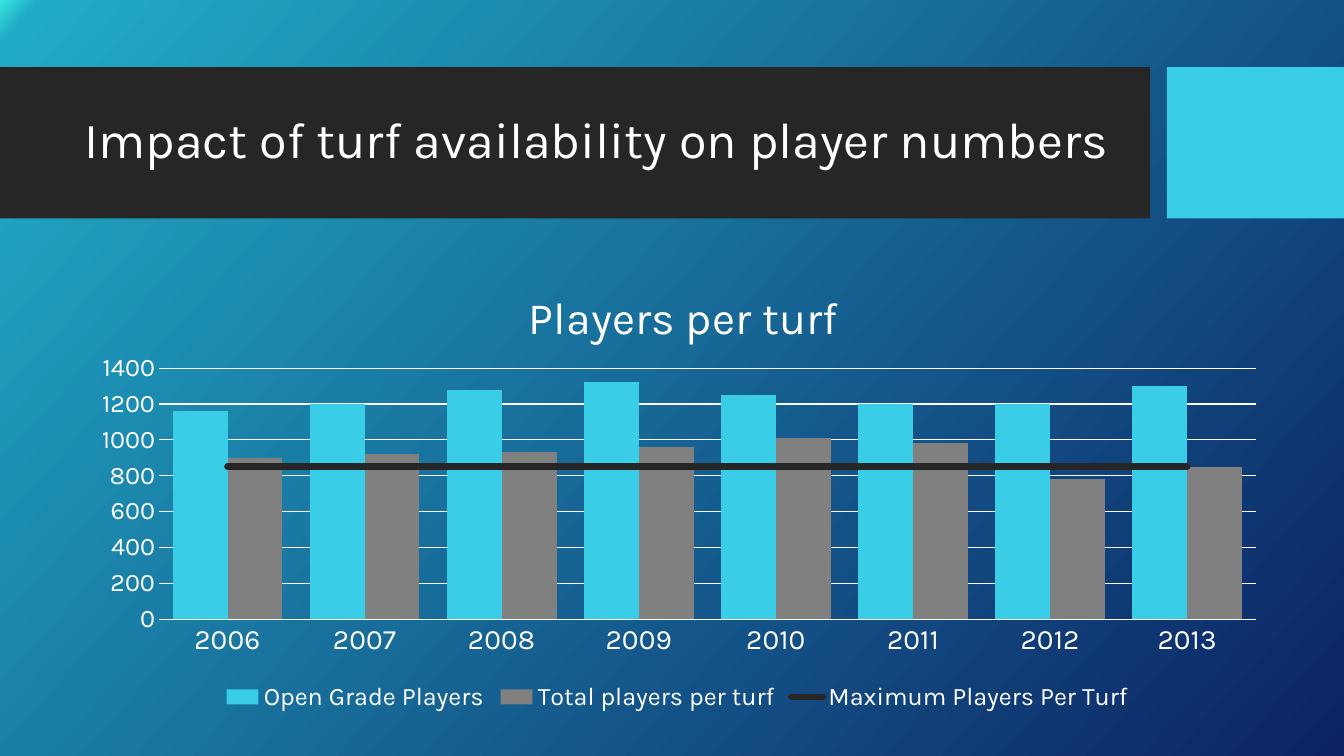
"""Build the slide on turf availability and player numbers."""
from copy import deepcopy
from dataclasses import dataclass

from lxml import etree
from pptx import Presentation
from pptx import util as u
from pptx.chart import data as chart_data
from pptx.dml import color
from pptx.enum import chart as charts
from pptx.enum import shapes, text
from pptx.oxml import ns, parse_xml


@dataclass(frozen=True)
class Theme:
    """Colours, font and type sizes."""
    font: str = "Karla"
    dark: str = "262626"
    cyan: str = "39CDE7"
    gray: str = "808080"
    white: str = "FFFFFF"
    background: tuple = ((0, "36E6DD"), (0.02, "21ABC8"), (1, "0C2263"))
    background_angle: int = 42
    heading: int = 36
    chart_title: int = 32
    category: int = 20
    label: int = 18


def rgb(value):
    """Return a colour from its hex code."""
    return color.RGBColor.from_string(value)


def drop(element, tag):
    """Remove the children that have a tag."""
    for child in element.findall(ns.qn(tag)):
        element.remove(child)


def place(element, index, **fractions):
    """Give a chart part a manual layout in fractions of the chart."""
    drop(element, "c:layout")
    layout = parse_xml(f'<c:layout {ns.nsdecls("c")}><c:manualLayout/></c:layout>')
    for name, value in fractions.items():
        etree.SubElement(layout[0], ns.qn(f"c:{name}")).set("val", str(value))
    element.insert(index, layout)


class SlideBuilder:
    """Draw elements on one slide in one style."""

    def __init__(self, slide, theme):
        self.slide = slide
        self.theme = theme

    def background(self):
        """Fill the slide with the theme gradient."""
        fill = self.slide.background.fill
        fill.gradient()
        stops = self.slide.element.find(".//" + ns.qn("a:gsLst"))
        stops.append(deepcopy(stops[-1]))
        fill.gradient_angle = 360 - self.theme.background_angle
        for stop, (position, value) in zip(fill.gradient_stops, self.theme.background):
            stop.position = position
            stop.color.rgb = rgb(value)

    def style(self, font, size):
        """Set the theme font in white at a size."""
        font.name = self.theme.font
        font.size = u.Pt(size)
        font.bold = False
        font.color.rgb = rgb(self.theme.white)

    def block(self, left, top, width, height, fill):
        """Add a plain filled rectangle."""
        shape = self.slide.shapes.add_shape(
            shapes.MSO_SHAPE.RECTANGLE, *map(u.Pt, (left, top, width, height)))
        shape.shadow.inherit = False
        shape.fill.solid()
        shape.fill.fore_color.rgb = rgb(fill)
        shape.line.fill.background()

    def heading(self, left, top, width, height, words):
        """Add the slide heading."""
        box = self.slide.shapes.add_textbox(*map(u.Pt, (left, top, width, height)))
        frame = box.text_frame
        frame.word_wrap = True
        frame.vertical_anchor = text.MSO_ANCHOR.MIDDLE
        paragraph = frame.paragraphs[0]
        paragraph.line_spacing = 0.9
        run = paragraph.add_run()
        run.text = words
        self.style(run.font, self.theme.heading)

    def chart(self, left, top, width, height, title, categories, series):
        """Add a column chart whose last series is a line."""
        data = chart_data.CategoryChartData(number_format="General")
        data.categories = categories
        for name, values in series.items():
            data.add_series(name, values)
        chart = self.slide.shapes.add_chart(
            charts.XL_CHART_TYPE.COLUMN_CLUSTERED,
            *map(u.Pt, (left, top, width, height)), data).chart
        self.style(chart.font, self.theme.label)
        self.move_last_to_line(chart)
        self.series_colours(chart)
        self.axes(chart)
        self.chart_title(chart, title)
        chart.has_legend = True
        chart.legend.position = charts.XL_LEGEND_POSITION.BOTTOM
        chart.legend.include_in_layout = False
        self.style(chart.legend.font, self.theme.label)

    def move_last_to_line(self, chart):
        """Move the last column series into a line plot on the same axes."""
        plot_area = chart.element.find(".//" + ns.qn("c:plotArea"))
        columns = plot_area.find(ns.qn("c:barChart"))
        line = parse_xml(
            f'<c:lineChart {ns.nsdecls("c")}><c:grouping val="standard"/>'
            '<c:varyColors val="0"/><c:marker val="1"/></c:lineChart>')
        last = columns.findall(ns.qn("c:ser"))[-1]
        drop(last, "c:invertIfNegative")
        line.insert(2, last)
        for axis in columns.findall(ns.qn("c:axId")):
            line.append(deepcopy(axis))
        columns.addnext(line)
        place(plot_area, 0, layoutTarget="inner", xMode="edge", yMode="edge",
              x=0.07, y=0.25, w=0.91, h=0.54)

    def series_colours(self, chart):
        """Colour the columns and the line."""
        columns, lines = chart.plots
        columns.gap_width = 50
        columns.overlap = 0
        columns.vary_by_categories = False
        for column, fill in zip(columns.series, (self.theme.cyan, self.theme.gray)):
            column.invert_if_negative = False
            column.format.fill.solid()
            column.format.fill.fore_color.rgb = rgb(fill)
        limit = lines.series[0]
        limit.smooth = False
        limit.marker.style = charts.XL_MARKER_STYLE.NONE
        limit.format.line.width = u.Pt(4.75)
        limit.format.line.color.rgb = rgb(self.theme.dark)
        limit.format.line._get_or_add_ln().set("cap", "rnd")

    def axes(self, chart):
        """Style both axes and the gridlines."""
        category, value = chart.category_axis, chart.value_axis
        for axis, size in ((category, self.theme.category), (value, self.theme.label)):
            axis.major_tick_mark = axis.minor_tick_mark = charts.XL_TICK_MARK.NONE
            self.style(axis.tick_labels.font, size)
        value.minimum_scale, value.maximum_scale, value.major_unit = 0, 1400, 200
        value.has_major_gridlines = True
        value.format.line.fill.background()
        for line in (category.format.line, value.major_gridlines.format.line):
            line.width = u.Pt(0.75)
            line.color.rgb = rgb(self.theme.white)

    def chart_title(self, chart, words):
        """Add the chart title."""
        chart.has_title = True
        run = chart.chart_title.text_frame.paragraphs[0].add_run()
        run.text = words
        self.style(run.font, self.theme.chart_title)
        place(chart.chart_title._element, 1, xMode="edge", yMode="edge", x=0.37, y=0.06)


def main():
    """Build and save the presentation."""
    presentation = Presentation()
    presentation.slide_width, presentation.slide_height = u.Pt(960), u.Pt(540)
    theme = Theme()
    slide = presentation.slides.add_slide(presentation.slide_layouts[6])
    builder = SlideBuilder(slide, theme)
    builder.background()
    builder.block(0, 48, 821.5, 108, theme.dark)
    builder.block(833.5, 48, 126.5, 108, theme.cyan)
    builder.heading(53.3, 59, 756.7, 85,
                    "Impact of turf availability on player numbers")
    years = [str(year) for year in range(2006, 2014)]
    builder.chart(53.3, 180, 861, 332, "Players per turf", years, {
        "Open Grade Players": (1160, 1200, 1280, 1320, 1250, 1200, 1200, 1300),
        "Total players per turf": (900, 920, 930, 960, 1010, 980, 780, 850),
        "Maximum Players Per Turf": (850,) * len(years),
    })
    presentation.save("out.pptx")


if __name__ == "__main__":
    main()
